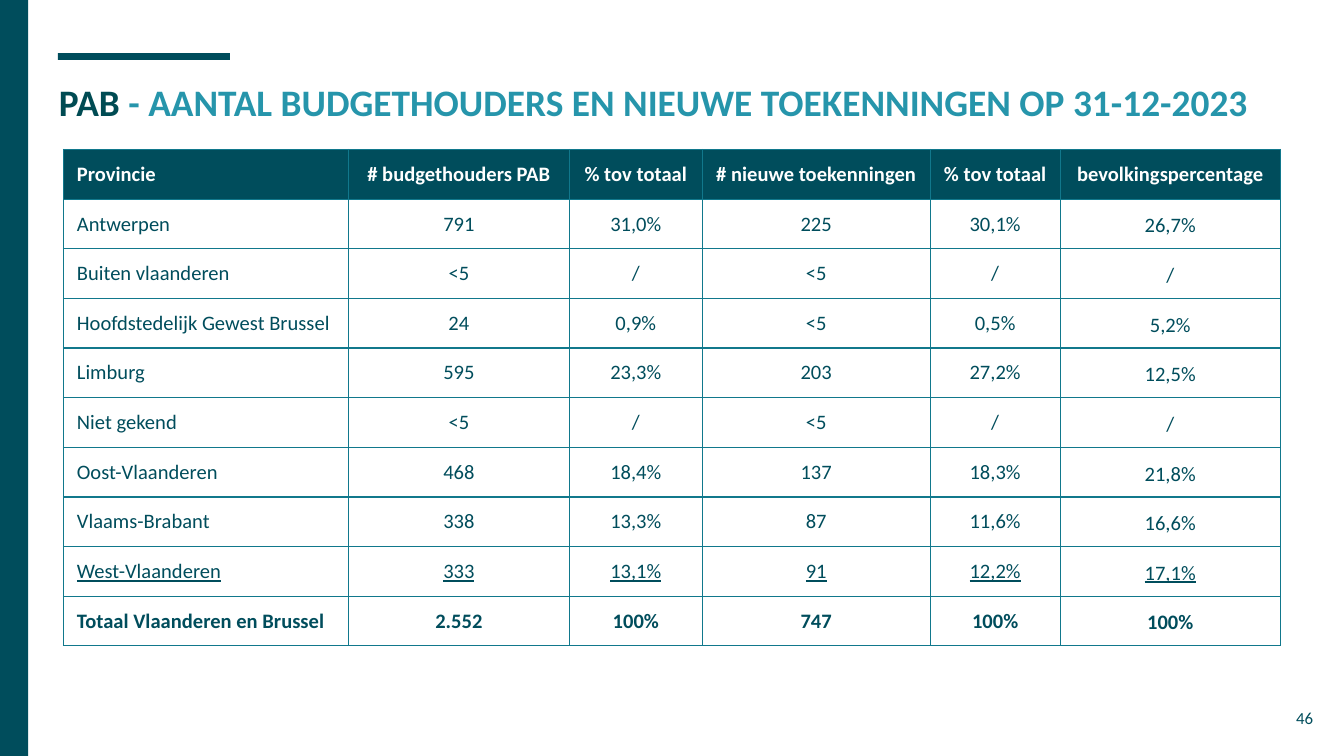
from lxml.etree import SubElement
from pptx import Presentation
from pptx.dml.color import RGBColor
from pptx.enum.shapes import MSO_SHAPE
from pptx.enum.text import MSO_ANCHOR, PP_ALIGN
from pptx.oxml.ns import qn
from pptx.util import Pt

DARK = RGBColor(0x00, 0x4D, 0x5C)
DEEP = RGBColor(0x00, 0x4B, 0x53)
TEAL = RGBColor(0x26, 0x95, 0xAB)
EDGE = RGBColor(0x11, 0x78, 0x8C)
WHITE = RGBColor(0xFF, 0xFF, 0xFF)

WIDTHS = [152.7, 118.4, 71.2, 122.1, 69.7, 117.9]
HEIGHT = 26.6
ROWS = [
    ["Provincie", "# budgethouders PAB", "% tov totaal",
     "# nieuwe toekenningen", "% tov totaal", "bevolkingspercentage"],
    ["Antwerpen", "791", "31,0%", "225", "30,1%", "26,7%"],
    ["Buiten vlaanderen", "<5", "/", "<5", "/", "/"],
    ["Hoofdstedelijk Gewest Brussel", "24", "0,9%", "<5", "0,5%", "5,2%"],
    ["Limburg", "595", "23,3%", "203", "27,2%", "12,5%"],
    ["Niet gekend", "<5", "/", "<5", "/", "/"],
    ["Oost-Vlaanderen", "468", "18,4%", "137", "18,3%", "21,8%"],
    ["Vlaams-Brabant", "338", "13,3%", "87", "11,6%", "16,6%"],
    ["West-Vlaanderen", "333", "13,1%", "91", "12,2%", "17,1%"],
    ["Totaal Vlaanderen en Brussel", "2.552", "100%", "747", "100%", "100%"],
]


class Deck:
    """Holds the style and the current slide."""

    def __init__(self, slide, face="Calibri", pad=7.2):
        self.slide, self.face, self.pad = slide, face, pad

    def run(self, para, text, size, color, bold=False, under=False):
        run = para.add_run()
        run.text = text
        font = run.font
        font.name, font.size, font.bold = self.face, Pt(size), bold
        font.underline = under
        font.color.rgb = color

    def bar(self, *box):
        shape = self.slide.shapes.add_shape(
            MSO_SHAPE.RECTANGLE, *map(Pt, box))
        shape.shadow.inherit = False
        shape.fill.solid()
        shape.fill.fore_color.rgb = DARK
        shape.line.fill.background()

    def text(self, box, runs, size, bold=False, align=PP_ALIGN.LEFT):
        frame = self.slide.shapes.add_textbox(*map(Pt, box)).text_frame
        frame.word_wrap = True
        frame.margin_left = frame.margin_right = Pt(self.pad)
        frame.margin_top = frame.margin_bottom = Pt(self.pad)
        para = frame.paragraphs[0]
        para.alignment = align
        for text, color in runs:
            self.run(para, text, size, color, bold)

    def edge(self, cell, width=0.75):
        props = cell._tc.get_or_add_tcPr()
        for side in ("a:lnL", "a:lnR", "a:lnT", "a:lnB"):
            line = SubElement(props, qn(side), w=str(Pt(width)))
            fill = SubElement(line, qn("a:solidFill"))
            SubElement(fill, qn("a:srgbClr"), val=str(EDGE))

    def cell(self, cell, text, color, fill=None, bold=False, under=False,
             align=PP_ALIGN.CENTER, space=None):
        self.edge(cell)
        if fill is None:
            cell.fill.background()
        else:
            cell.fill.solid()
            cell.fill.fore_color.rgb = fill
        cell.vertical_anchor = MSO_ANCHOR.MIDDLE
        cell.margin_left = cell.margin_right = Pt(self.pad)
        cell.margin_top = cell.margin_bottom = 0
        para = cell.text_frame.paragraphs[0]
        para.alignment = align
        if space:
            para.line_spacing = space
        self.run(para, text, 11, color, bold, under)

    def table(self, left, top, rows, widths, height):
        last, end = len(rows) - 1, len(widths) - 1
        table = self.slide.shapes.add_table(
            len(rows), len(widths), Pt(left), Pt(top),
            Pt(sum(widths)), Pt(height * len(rows))).table
        table.first_row = table.horz_banding = False
        for col, width in zip(table.columns, widths):
            col.width = Pt(width)
        for r, row in enumerate(rows):
            table.rows[r].height = Pt(height)
            head = r == 0
            for c, text in enumerate(row):
                self.cell(
                    table.cell(r, c), text,
                    color=WHITE if head else DARK,
                    fill=DARK if head else None,
                    bold=r in (0, last),
                    under=r == last - 1,
                    align=PP_ALIGN.CENTER if c else PP_ALIGN.LEFT,
                    space=1.15 if c == end and not head else None)


def main():
    show = Presentation()
    show.slide_width, show.slide_height = Pt(720), Pt(405)
    deck = Deck(show.slides.add_slide(show.slide_layouts[6]))

    # Accent bars
    deck.bar(31, 28.5, 92.2, 3.6)
    deck.bar(0, 0, 15.1, 405)

    # Title and page number
    deck.text((24.5, 35.3, 671, 45.4), [
        ("PAB ", DEEP),
        ("- AANTAL BUDGETHOUDERS EN NIEUWE TOEKENNINGEN OP 31-12-2023", TEAL),
    ], 20, bold=True)
    deck.text((667.4, 373.7, 43.2, 31), [("46", DARK)], 9,
              align=PP_ALIGN.RIGHT)

    # Budget holders per province
    deck.table(34, 80.1, ROWS, WIDTHS, HEIGHT)

    show.save("out.pptx")


if __name__ == "__main__":
    main()
